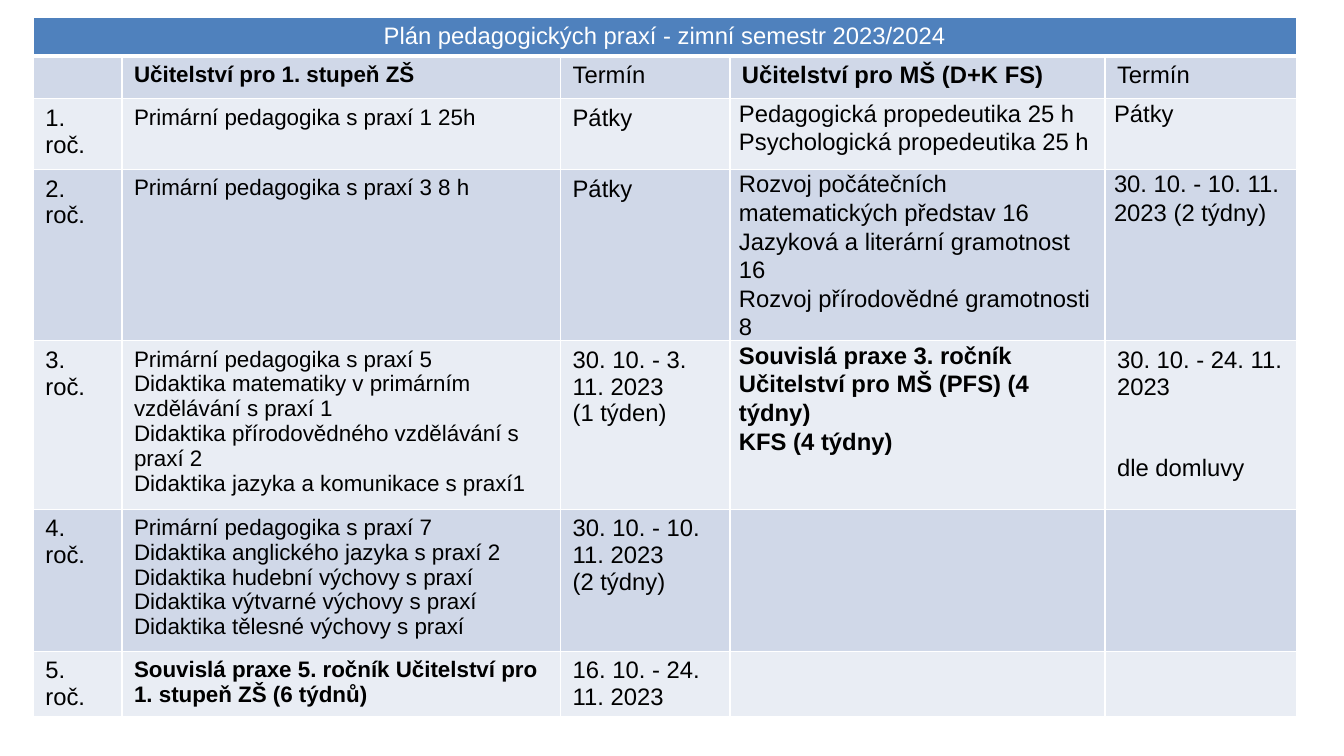
from lxml.etree import SubElement
from pptx import Presentation
from pptx.dml.color import RGBColor
from pptx.enum.text import PP_ALIGN
from pptx.oxml.ns import qn
from pptx.util import Inches, Pt

HEADER_BLUE = RGBColor(0x4F, 0x81, 0xBD)
BAND_DARK = RGBColor(0xD0, 0xD8, 0xE8)
BAND_LIGHT = RGBColor(0xE9, 0xED, 0xF4)
WHITE = RGBColor(0xFF, 0xFF, 0xFF)
BLACK = RGBColor(0, 0, 0)

COLUMN_WIDTHS = [0.88, 4.35, 1.68, 3.72, 1.9]
ROW_HEIGHTS = [0.37, 0.4, 0.7, 1.67, 1.67, 1.41, 0.63]
PRIMARY_COLUMN = 1
BOLD_CELLS = {(1, 1), (1, 3), (4, 3), (6, 1)}
TIGHT_CELLS = {(2, 3), (2, 4), (3, 3), (3, 4), (4, 3)}
BY_AGREEMENT = "dle domluvy"

PLAN = [
    [["Plán pedagogických praxí - zimní semestr 2023/2024"], [], [], [], []],
    [[], ["Učitelství pro 1. stupeň ZŠ"], ["Termín"],
     ["Učitelství pro MŠ (D+K FS)"], ["Termín"]],
    [["1. roč."], ["Primární pedagogika s praxí 1 25h"], ["Pátky"],
     ["Pedagogická propedeutika 25 h", "Psychologická propedeutika 25 h"],
     ["Pátky"]],
    [["2. roč."], ["Primární pedagogika s praxí 3 8 h"], ["Pátky"],
     ["Rozvoj počátečních matematických představ 16",
      "Jazyková a literární gramotnost 16",
      "Rozvoj přírodovědné gramotnosti 8"],
     ["30. 10. - 10. 11. 2023 (2 týdny)"]],
    [["3. roč."],
     ["Primární pedagogika s praxí 5",
      "Didaktika matematiky v primárním vzdělávání s praxí 1",
      "Didaktika přírodovědného vzdělávání s praxí 2",
      "Didaktika jazyka a komunikace s praxí1"],
     ["30. 10. - 3. 11. 2023", "(1 týden)"],
     ["Souvislá praxe 3. ročník Učitelství pro MŠ (PFS) (4 týdny)",
      "KFS (4 týdny)"],
     ["30. 10. - 24. 11. 2023", BY_AGREEMENT]],
    [["4. roč."],
     ["Primární pedagogika s praxí 7",
      "Didaktika anglického jazyka s praxí 2",
      "Didaktika hudební výchovy s praxí",
      "Didaktika výtvarné výchovy s praxí",
      "Didaktika tělesné výchovy s praxí"],
     ["30. 10. - 10. 11. 2023", "(2 týdny)"], [], []],
    [["5. roč."],
     ["Souvislá praxe 5. ročník Učitelství pro 1. stupeň ZŠ (6 týdnů)"],
     ["16. 10. - 24. 11. 2023"], [], []],
]


def set_borders(cell, row):
    widths = {"a:lnL": 1, "a:lnR": 1,
              "a:lnT": 3 if row == 1 else 1,
              "a:lnB": 3 if row == 0 else 1}
    properties = cell._tc.get_or_add_tcPr()
    for tag, width in widths.items():
        line = SubElement(properties, qn(tag), w=str(Pt(width)))
        fill = SubElement(line, qn("a:solidFill"))
        SubElement(fill, qn("a:srgbClr"), val=str(WHITE))


def fill_cell(cell, row, column, texts):
    is_header = row == 0
    is_tight = (row, column) in TIGHT_CELLS
    cell.margin_left = cell.margin_right = Inches(0.09 if is_tight else 0.12)
    cell.margin_top = cell.margin_bottom = Inches(0 if is_tight else 0.06)
    set_borders(cell, row)
    cell.fill.solid()
    band = BAND_DARK if row % 2 else BAND_LIGHT
    cell.fill.fore_color.rgb = HEADER_BLUE if is_header else band

    frame = cell.text_frame
    for index, text in enumerate(texts):
        paragraph = frame.add_paragraph() if index else frame.paragraphs[0]
        if is_header:
            paragraph.alignment = PP_ALIGN.CENTER
        if is_tight:
            paragraph.line_spacing = 1.07
        if text == BY_AGREEMENT:
            paragraph.space_before = Pt(39)
        run = paragraph.add_run()
        run.text = text
        run.font.name = "Arial"
        run.font.size = Pt(16 if column == PRIMARY_COLUMN else 17)
        run.font.bold = (row, column) in BOLD_CELLS
        run.font.color.rgb = WHITE if is_header else BLACK


def add_plan_table(slide, left, top):
    table = slide.shapes.add_table(
        len(ROW_HEIGHTS), len(COLUMN_WIDTHS), left, top,
        Inches(sum(COLUMN_WIDTHS)), Inches(sum(ROW_HEIGHTS))).table
    for column, width in zip(table.columns, COLUMN_WIDTHS):
        column.width = Inches(width)
    for row, height in zip(table.rows, ROW_HEIGHTS):
        row.height = Inches(height)
    for row, row_texts in enumerate(PLAN):
        for column, texts in enumerate(row_texts):
            fill_cell(table.cell(row, column), row, column, texts)
    table.cell(0, 0).merge(table.cell(0, len(COLUMN_WIDTHS) - 1))


def main():
    presentation = Presentation()
    presentation.slide_width = Inches(13.33)
    presentation.slide_height = Inches(7.5)
    slide = presentation.slides.add_slide(presentation.slide_layouts[6])
    add_plan_table(slide, Inches(0.33), Inches(0.17))
    presentation.save("out.pptx")


if __name__ == "__main__":
    main()
